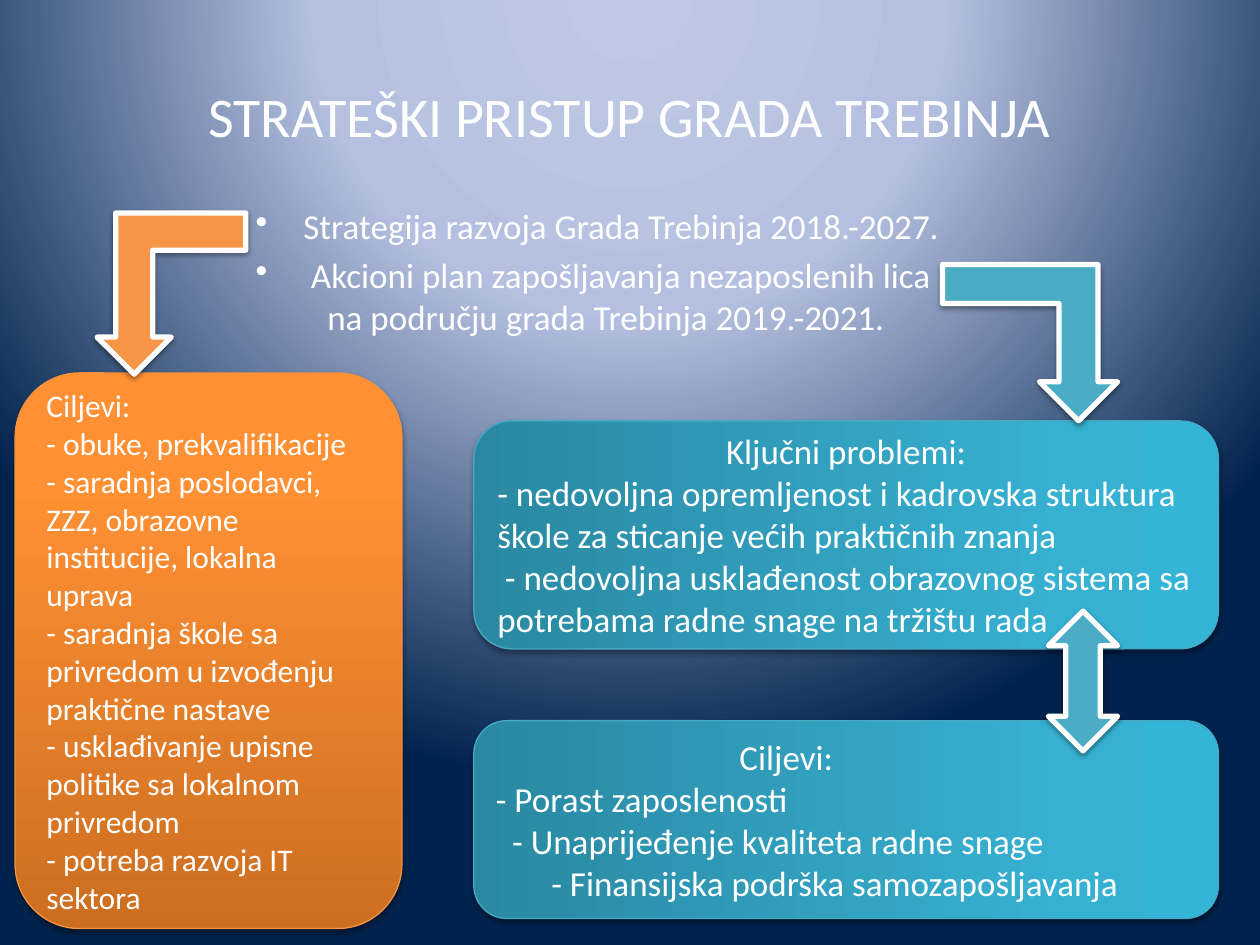
"""Build the slide on the strategic approach of the city of Trebinje."""
from dataclasses import dataclass

from lxml import etree
from pptx import Presentation
from pptx.dml.color import RGBColor
from pptx.enum.shapes import MSO_SHAPE
from pptx.enum.text import MSO_ANCHOR, PP_ALIGN
from pptx.oxml import parse_xml
from pptx.oxml.ns import nsdecls, qn
from pptx.util import Inches, Pt

ROUNDED = MSO_SHAPE.ROUNDED_RECTANGLE
BENT_ARROW = MSO_SHAPE.BENT_UP_ARROW
DOUBLE_ARROW = MSO_SHAPE.UP_DOWN_ARROW
TOP, MIDDLE, BOTTOM = MSO_ANCHOR.TOP, MSO_ANCHOR.MIDDLE, MSO_ANCHOR.BOTTOM
LEFT, CENTER = PP_ALIGN.LEFT, PP_ALIGN.CENTER


@dataclass(frozen=True)
class Theme:
    font: str = "Calibri"
    title_size: int = 32
    body_size: int = 20
    small_size: int = 18
    white: str = "FFFFFF"
    black: str = "000000"
    orange: str = "F79646"
    teal: str = "4BACC6"
    orange_edge: str = "F69240"
    teal_edge: str = "46AAC5"
    orange_stops: tuple = ((0, "CC6E20"), (80, "FF9034"), (100, "FF9136"))
    teal_stops: tuple = ((0, "2A88A2"), (80, "37B1D2"), (100, "34B4D6"))
    page_stops: tuple = ((0, "BFC9E5"), (40, "B5C0E0"), (100, "00234D"))


THEME = Theme()
UPWARD = '<a:lin ang="16200000" scaled="0"/>'
RADIAL = ('<a:path path="circle"><a:fillToRect l="50000" t="-80000" '
          'r="50000" b="180000"/></a:path>')


@dataclass(frozen=True)
class Line:
    text: str
    align: PP_ALIGN = LEFT
    left: float = 0
    right: float = 0
    first: float = 0
    before: float = 0
    bullet: str = ""


@dataclass(frozen=True)
class Panel:
    place: tuple
    stops: tuple
    edge: str
    size: int
    lines: tuple
    rotation: int = 0
    direction: str = "horz"


@dataclass(frozen=True)
class Arrow:
    kind: MSO_SHAPE
    place: tuple
    color: str
    rotation: int = 0
    flipped: bool = False


TITLE = (Line("STRATEŠKI PRISTUP GRADA TREBINJA", align=CENTER),)
DOCUMENTS = (
    Line("Strategija razvoja Grada Trebinja 2018.-2027.",
         left=0.38, first=-0.38, before=4, bullet="•"),
    Line("Akcioni plan zapošljavanja nezaposlenih lica",
         left=0.44, first=-0.44, before=4, bullet="•"),
    Line("na području grada Trebinja 2019.-2021.", left=0.57),
)
PANELS = (
    Panel((0.12, 2.96, 3.07, 4.41), THEME.orange_stops, THEME.orange_edge,
          THEME.small_size, (
              Line("Ciljevi:"),
              Line("- obuke, prekvalifikacije"),
              Line("- saradnja poslodavci, ZZZ, obrazovne institucije, "
                   "lokalna uprava"),
              Line("- saradnja škole sa privredom u izvođenju "
                   "praktične nastave"),
              Line("- usklađivanje upisne politike sa lokalnom privredom"),
              Line("- potreba razvoja IT sektora"))),
    Panel((5.81, 1.29, 1.81, 5.91), THEME.teal_stops, THEME.teal_edge,
          THEME.body_size, (
              Line("Ključni problemi:", align=CENTER),
              Line("- nedovoljna opremljenost i kadrovska struktura škole "
                   "za sticanje većih praktičnih znanja"),
              Line("- nedovoljna usklađenost obrazovnog sistema sa "
                   "potrebama radne snage na tržištu rada", first=0.06)),
          rotation=90, direction="vert270"),
    Panel((5.93, 3.55, 1.57, 5.91), THEME.teal_stops, THEME.teal_edge,
          THEME.body_size, (
              Line("Ciljevi:", align=CENTER, right=0.95),
              Line("- Porast zaposlenosti"),
              Line("- Unaprijeđenje kvaliteta radne snage", left=0.13),
              Line("- Finansijska podrška samozapošljavanja", left=0.44)),
          rotation=90, direction="vert270"),
)
ARROWS = (
    Arrow(BENT_ARROW, (0.77, 1.69, 1.18, 1.28), THEME.orange, rotation=180),
    Arrow(DOUBLE_ARROW, (8.32, 4.85, 0.55, 1.11), THEME.teal),
    Arrow(BENT_ARROW, (7.48, 2.1, 1.39, 1.24), THEME.teal, flipped=True),
)


def set_gradient(properties, stops: tuple, shading: str) -> None:
    """Replace the empty fill of a properties element by a gradient."""
    marks = "".join(f'<a:gs pos="{position * 1000}"><a:srgbClr val="{color}"/></a:gs>'
                    for position, color in stops)
    gradient = parse_xml(f'<a:gradFill {nsdecls("a")} rotWithShape="1">'
                         f'<a:gsLst>{marks}</a:gsLst>{shading}</a:gradFill>')
    properties.replace(properties.find(qn("a:noFill")), gradient)


def add_shadow(shape, opacity: int, distance: float) -> None:
    """Give a shape a soft shadow straight below it."""
    shape.shadow.inherit = False
    effects = shape.element.spPr.find(qn("a:effectLst"))
    shadow = etree.SubElement(effects, qn("a:outerShdw"), blurRad=str(Pt(3.1)),
                              dist=str(Pt(distance)), dir="5400000", rotWithShape="0")
    color = etree.SubElement(shadow, qn("a:srgbClr"), val=THEME.black)
    etree.SubElement(color, qn("a:alpha"), val=str(opacity * 1000))


def write_text(box, lines: tuple, *, size: int, anchor: MSO_ANCHOR,
               direction: str = "horz") -> None:
    """Write formatted lines into a box, one paragraph each."""
    frame = box.text_frame
    frame.word_wrap = True
    frame.vertical_anchor = anchor
    frame._txBody.bodyPr.set("vert", direction)
    for index, line in enumerate(lines):
        para = frame.add_paragraph() if index else frame.paragraphs[0]
        para.alignment = line.align
        para.space_before = Pt(line.before)
        properties = para._p.get_or_add_pPr()
        for name, length in (("marL", line.left), ("marR", line.right),
                             ("indent", line.first)):
            properties.set(name, str(Inches(length)))
        if line.bullet:
            etree.SubElement(properties, qn("a:buChar"), char=line.bullet)
        span = para.add_run()
        span.text = line.text
        span.font.name = THEME.font
        span.font.size = Pt(size)
        span.font.color.rgb = RGBColor.from_string(THEME.white)


def add_label(page, place: tuple, lines: tuple, *, size: int,
              anchor: MSO_ANCHOR) -> None:
    """Add a plain text box."""
    box = page.shapes.add_textbox(*map(Inches, place))
    write_text(box, lines, size=size, anchor=anchor)


def add_panel(page, panel: Panel) -> None:
    """Add a rounded gradient panel with its text."""
    box = page.shapes.add_shape(ROUNDED, *map(Inches, panel.place))
    box.rotation = panel.rotation
    box.fill.background()
    set_gradient(box.element.spPr, panel.stops, UPWARD)
    box.line.color.rgb = RGBColor.from_string(panel.edge)
    box.line.width = Pt(0.75)
    add_shadow(box, 35, 1.8)
    write_text(box, panel.lines, size=panel.size, anchor=MIDDLE,
               direction=panel.direction)


def add_arrow(page, arrow: Arrow) -> None:
    """Add a block arrow with a white outline."""
    shape = page.shapes.add_shape(arrow.kind, *map(Inches, arrow.place))
    shape.rotation = arrow.rotation
    if arrow.flipped:
        shape.element.spPr.find(qn("a:xfrm")).set("flipV", "1")
    shape.fill.solid()
    shape.fill.fore_color.rgb = RGBColor.from_string(arrow.color)
    shape.line.color.rgb = RGBColor.from_string(THEME.white)
    shape.line.width = Pt(3)
    add_shadow(shape, 38, 1.6)


def main() -> None:
    """Build and save the deck."""
    deck = Presentation()
    deck.slide_width, deck.slide_height = Inches(10), Inches(7.5)
    page = deck.slides.add_slide(deck.slide_layouts[6])
    page.background.fill.background()
    set_gradient(page.element.find(".//" + qn("p:bgPr")), THEME.page_stops, RADIAL)
    add_label(page, (0, 0.6, 10, 0.79), TITLE, size=THEME.title_size, anchor=TOP)
    add_label(page, (1.93, 1.23, 8.23, 1.5), DOCUMENTS, size=THEME.body_size,
              anchor=BOTTOM)
    for panel in PANELS:
        add_panel(page, panel)
    for arrow in ARROWS:
        add_arrow(page, arrow)
    deck.save("out.pptx")


if __name__ == "__main__":
    main()
